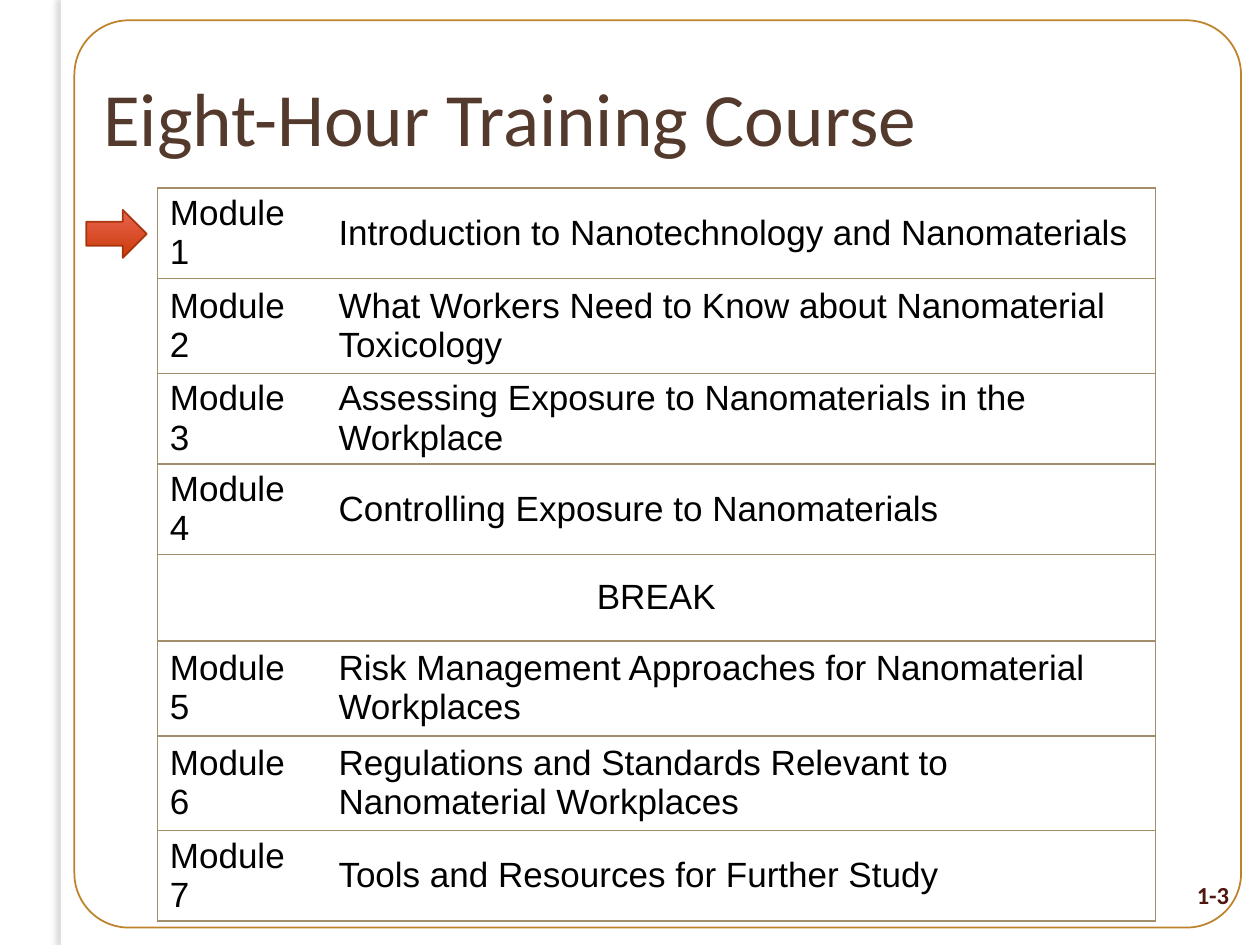
from lxml import etree
from pptx import Presentation
from pptx import util as u
from pptx.dml.color import RGBColor
from pptx.enum import shapes, text
from pptx.oxml import parse_xml
from pptx.oxml.ns import nsdecls, qn

WHITE = RGBColor(0xFF, 0xFF, 0xFF)
BLACK = RGBColor(0, 0, 0)
BROWN = RGBColor(0x53, 0x3A, 0x2C)
MAROON = RGBColor(0x4E, 0x17, 0x10)
GOLD = RGBColor(0xB7, 0x75, 0x13)
TAN = RGBColor(0xA2, 0x8E, 0x6A)
ARROW_TOP = RGBColor(0xE7, 0x64, 0x50)
ARROW_BOTTOM = RGBColor(0xCC, 0x3B, 0x08)
ARROW_LINE = RGBColor(0xA3, 0x2F, 0x06)
SHADOW = RGBColor(0x74, 0x72, 0x6D)

ROW_LOW, ROW_HIGH = 1.75, 1.91
AGENDA = [
    ("Module 1", "Introduction to Nanotechnology and Nanomaterials", ROW_LOW),
    ("Module 2", "What Workers Need to Know about Nanomaterial Toxicology", ROW_HIGH),
    ("Module 3", "Assessing Exposure to Nanomaterials in the Workplace", ROW_LOW),
    ("Module 4", "Controlling Exposure to Nanomaterials", ROW_LOW),
    ("BREAK", None, ROW_LOW),
    ("Module 5", "Risk Management Approaches for Nanomaterial Workplaces", ROW_HIGH),
    ("Module 6", "Regulations and Standards Relevant to Nanomaterial Workplaces", ROW_HIGH),
    ("Module 7", "Tools and Resources for Further Study", ROW_LOW),
]


def box_lengths(box):
    return [u.Cm(value) for value in box]


def format_text(text_frame, font_name, size, color, bold=False, align=text.PP_ALIGN.LEFT):
    paragraph = text_frame.paragraphs[0]
    paragraph.alignment = align
    font = paragraph.runs[0].font
    font.name, font.size, font.bold = font_name, u.Pt(size), bold
    font.color.rgb = color


def add_text(slide, box, content, anchor, *style, **options):
    text_frame = slide.shapes.add_textbox(*box_lengths(box)).text_frame
    text_frame.word_wrap = True
    text_frame.vertical_anchor = anchor
    text_frame.text = content
    format_text(text_frame, *style, **options)


def add_outlined_shape(slide, kind, box, color):
    """Add a preset shape without shadow and with a slightly transparent outline."""
    shape = slide.shapes.add_shape(kind, *box_lengths(box))
    shape.shadow.inherit = False
    shape.line.color.rgb = color
    shape.line.width = u.Pt(1)
    rgb = shape.line._get_or_add_ln().find(".//" + qn("a:srgbClr"))
    etree.SubElement(rgb, qn("a:alpha"), val="90000")
    return shape


def add_side_strip(slide, box):
    strip = slide.shapes.add_shape(shapes.MSO_SHAPE.RECTANGLE, *box_lengths(box))
    strip.fill.solid()
    strip.fill.fore_color.rgb = WHITE
    strip.line.fill.background()
    strip.shadow.inherit = False
    effects = strip._element.spPr.find(qn("a:effectLst"))
    effects.append(parse_xml(
        f'<a:outerShdw {nsdecls("a")} blurRad="{u.Pt(3)}" dist="{u.Pt(3)}" '
        f'dir="10800000" rotWithShape="0"><a:srgbClr val="{SHADOW}">'
        '<a:alpha val="25000"/></a:srgbClr></a:outerShdw>'))


def add_frame(slide, box):
    frame = add_outlined_shape(slide, shapes.MSO_SHAPE.ROUNDED_RECTANGLE, box, GOLD)
    frame.adjustments[0] = 0.06
    frame.fill.background()


def add_pointer(slide, box):
    arrow = add_outlined_shape(slide, shapes.MSO_SHAPE.RIGHT_ARROW, box, ARROW_LINE)
    arrow.fill.gradient()
    arrow.fill.gradient_angle = 270
    for stop, color in zip(arrow.fill.gradient_stops, (ARROW_TOP, ARROW_BOTTOM)):
        stop.color.rgb = color


def set_borders(cell, visible):
    properties = cell._tc.get_or_add_tcPr()
    for side in "LRTB":
        paint = f'<a:solidFill><a:srgbClr val="{TAN}"/></a:solidFill>' if side in visible else "<a:noFill/>"
        properties.append(parse_xml(
            f'<a:ln{side} {nsdecls("a")} w="{u.Pt(1)}">{paint}</a:ln{side}>'))


def add_agenda(slide, box):
    table = slide.shapes.add_table(len(AGENDA), 2, *box_lengths(box)).table
    table.first_row = table.horz_banding = False
    label_width = 3.4
    table.columns[0].width = u.Cm(label_width)
    table.columns[1].width = u.Cm(box[2] - label_width)
    for index, (label, topic, height) in enumerate(AGENDA):
        table.rows[index].height = u.Cm(height)
        cells = [table.cell(index, column) for column in range(2)]
        for cell, content, borders in zip(cells, (label, topic), ("LTB", "RTB")):
            set_borders(cell, borders if topic else "LRTB")
            cell.fill.solid()
            cell.fill.fore_color.rgb = WHITE
            cell.vertical_anchor = text.MSO_ANCHOR.MIDDLE
            cell.margin_top, cell.margin_bottom = u.Cm(0.06), u.Cm(0.07)
            if content:
                cell.text_frame.text = content
                align = text.PP_ALIGN.LEFT if topic else text.PP_ALIGN.CENTER
                format_text(cell.text_frame, "Arial", 20, BLACK, align=align)
        if topic is None:
            cells[0].merge(cells[1])


def build_course_slide(presentation):
    slide = presentation.slides.add_slide(presentation.slide_layouts[6])
    add_side_strip(slide, (1.23, 0, 0.2, 19.05))
    add_frame(slide, (1.5, 0.41, 23.52, 18.29))
    add_text(slide, (1.83, 0.76, 22.99, 3.18), "Eight-Hour Training Course",
             text.MSO_ANCHOR.MIDDLE, "Calibri", 43, BROWN)
    add_agenda(slide, (3.17, 3.79, 20.12, sum(row[2] for row in AGENDA)))
    add_pointer(slide, (1.74, 4.23, 1.22, 0.97))
    add_text(slide, (23.25, 17.62, 1.78, 1.27), "1-3", text.MSO_ANCHOR.TOP,
             "Calibri", 14, MAROON, bold=True, align=text.PP_ALIGN.RIGHT)


def main():
    presentation = Presentation()
    presentation.slide_width, presentation.slide_height = u.Cm(25.4), u.Cm(19.05)
    build_course_slide(presentation)
    presentation.save("out.pptx")


if __name__ == "__main__":
    main()
